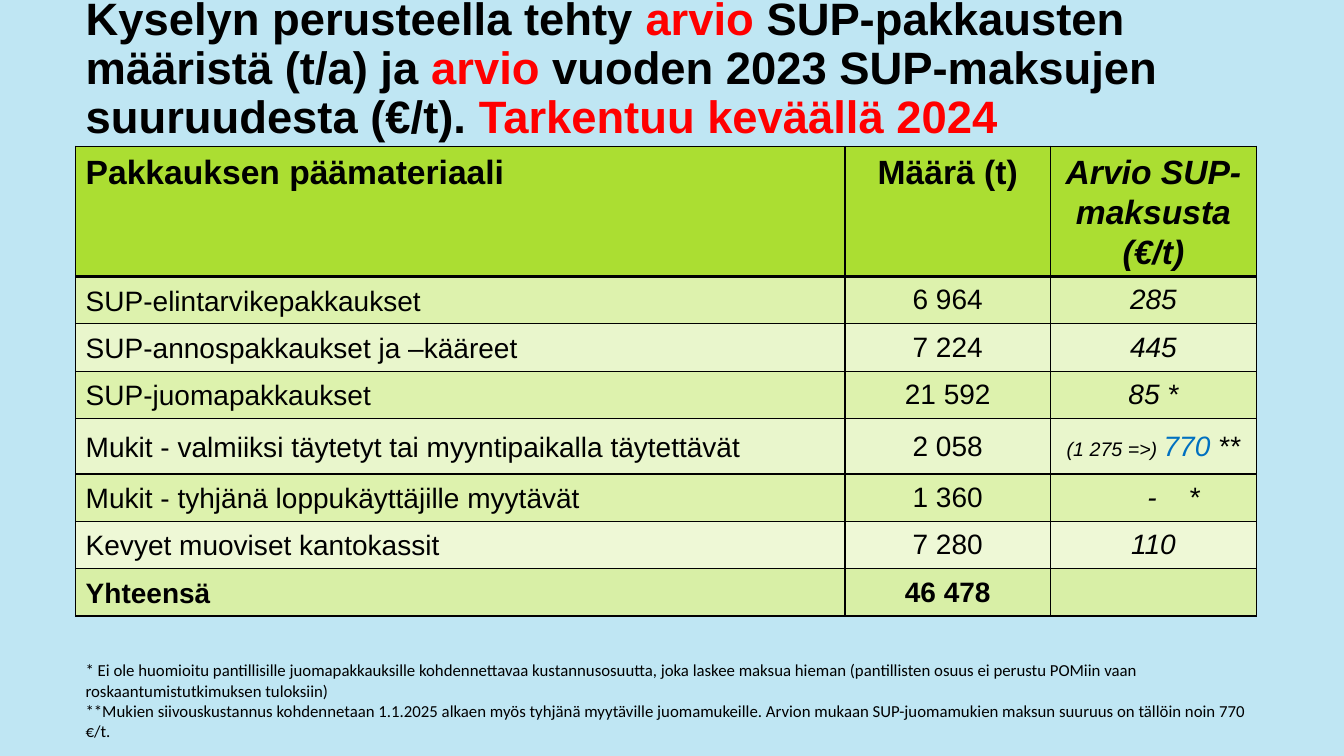
from dataclasses import dataclass

from lxml import etree
from pptx import Presentation
from pptx.dml.color import RGBColor
from pptx.enum import text as t
from pptx.oxml import ns
from pptx.util import Inches, Pt


@dataclass(frozen=True)
class Theme:
    background: str = "BFE6F3"
    ink: str = "000000"
    alert: str = "FF0000"
    revised: str = "0070C0"
    header: str = "ABDE32"
    bands: tuple = ("DDF2AD", "E9F6CC")
    bags: str = "EEF8D6"
    total: str = "D8EFA6"
    font: str = "Arial"
    note_font: str = "Calibri"
    title_size: float = 32.4
    header_size: int = 24
    body_size: int = 20
    gap_size: int = 16
    old_fee_size: int = 14
    note_size: int = 12


theme = Theme()


def add_run(paragraph, words, size, color=theme.ink, bold=False, italic=False, font=theme.font):
    run = paragraph.add_run()
    run.text = words
    run.font.name = font
    run.font.size = Pt(size)
    run.font.bold = bold
    run.font.italic = italic
    run.font.color.rgb = RGBColor.from_string(color)


def add_border(cell, side, width):
    line = etree.SubElement(cell._tc.get_or_add_tcPr(), ns.qn(f"a:ln{side}"), w=str(Pt(width)))
    fill = etree.SubElement(line, ns.qn("a:solidFill"))
    etree.SubElement(fill, ns.qn("a:srgbClr"), val=theme.ink)


prs = Presentation()
prs.slide_width, prs.slide_height = Inches(13.33), Inches(7.5)
slide = prs.slides.add_slide(prs.slide_layouts[5])
slide.background.fill.solid()
slide.background.fill.fore_color.rgb = RGBColor.from_string(theme.background)

# Title
title = slide.shapes.title
title.left, title.top, title.width, title.height = (Inches(v) for v in (0.75, 0.08, 11.33, 1.22))
title.text_frame.word_wrap = True
title.text_frame.auto_size = t.MSO_AUTO_SIZE.NONE
title.text_frame.vertical_anchor = t.MSO_ANCHOR.MIDDLE
heading = title.text_frame.paragraphs[0]
heading.alignment = t.PP_ALIGN.LEFT
heading.line_spacing = 0.9
heading.space_before = Pt(0)
for words, color in [
    ("Kyselyn perusteella tehty ", theme.ink),
    ("arvio", theme.alert),
    (" SUP-pakkausten määristä (t/a) ja ", theme.ink),
    ("arvio", theme.alert),
    (" vuoden 2023 SUP-maksujen suuruudesta (€/t). ", theme.ink),
    ("Tarkentuu keväällä 2024", theme.alert),
]:
    add_run(heading, words, theme.title_size, color, bold=True)

# Fee table: material, amount, estimated fee
cup_fee = [
    ("(1 275 =>)", theme.old_fee_size, theme.ink),
    (" ", theme.gap_size, theme.ink),
    ("770 ", theme.body_size, theme.revised),
    ("**", theme.body_size, theme.ink),
]
materials = [
    ("Pakkauksen päämateriaali", "Määrä (t)", "Arvio SUP-maksusta (€/t)"),
    ("SUP-elintarvikepakkaukset", "6 964", "285"),
    ("SUP-annospakkaukset ja –kääreet", "7 224", "445"),
    ("SUP-juomapakkaukset", "21 592", "85 *"),
    ("Mukit - valmiiksi täytetyt tai myyntipaikalla täytettävät", "2 058", cup_fee),
    ("Mukit - tyhjänä loppukäyttäjille myytävät", "1 360", "\t-\t*"),
    ("Kevyet muoviset kantokassit", "7 280", "110"),
    ("Yhteensä", "46 478", ""),
]
row_fills = [theme.header] + [theme.bands[i % 2] for i in range(5)] + [theme.bags, theme.total]
row_heights = [1.29, 0.47, 0.47, 0.47, 0.55, 0.47, 0.47, 0.47]
total_row = len(materials) - 1

fees = slide.shapes.add_table(len(materials), 3, Inches(0.75), Inches(1.45),
                              Inches(11.71), Inches(sum(row_heights))).table
fees.first_row = fees.horz_banding = False
for column, width in zip(fees.columns, (7.63, 2.04, 2.04)):
    column.width = Inches(width)

for r, (entries, height, fill) in enumerate(zip(materials, row_heights, row_fills)):
    fees.rows[r].height = Inches(height)
    for c, entry in enumerate(entries):
        cell = fees.cell(r, c)
        cell.vertical_anchor = t.MSO_ANCHOR.MIDDLE if r else t.MSO_ANCHOR.TOP
        for side in "LRTB":
            under_header = (r, side) in ((0, "B"), (1, "T"))
            add_border(cell, side, 3 if under_header else 1)
        cell.fill.solid()
        cell.fill.fore_color.rgb = RGBColor.from_string(fill)

        line = cell.text_frame.paragraphs[0]
        line.alignment = t.PP_ALIGN.CENTER if c else t.PP_ALIGN.LEFT
        if r == 0 or c == 0:
            line.line_spacing = 1.07
            line.space_after = Pt(8)
        if "\t" in entry:
            line.alignment = t.PP_ALIGN.LEFT
            stops = etree.SubElement(line._p.get_or_add_pPr(), ns.qn("a:tabLst"))
            for stop in (0.86, 1.27):
                etree.SubElement(stops, ns.qn("a:tab"), pos=str(Inches(stop)), algn="l")

        size = theme.body_size if r else theme.header_size
        parts = [(entry, size, theme.ink)] if isinstance(entry, str) else entry
        for words, part_size, color in parts:
            if words:
                add_run(line, words, part_size, color, bold=r in (0, total_row), italic=c == 2)

# Footnotes
footnotes = slide.shapes.add_textbox(Inches(0.75), Inches(6.5), Inches(11.89), Inches(0.91)).text_frame
footnotes.word_wrap = True
for i, note in enumerate([
    "* Ei ole huomioitu pantillisille juomapakkauksille kohdennettavaa kustannusosuutta, joka laskee "
    "maksua hieman (pantillisten osuus ei perustu POMiin vaan roskaantumistutkimuksen tuloksiin)",
    "**Mukien siivouskustannus kohdennetaan 1.1.2025 alkaen myös tyhjänä myytäville juomamukeille. "
    "Arvion mukaan SUP-juomamukien maksun suuruus on tällöin noin 770 €/t.",
]):
    paragraph = footnotes.add_paragraph() if i else footnotes.paragraphs[0]
    add_run(paragraph, note, theme.note_size, font=theme.note_font)

prs.save("out.pptx")
